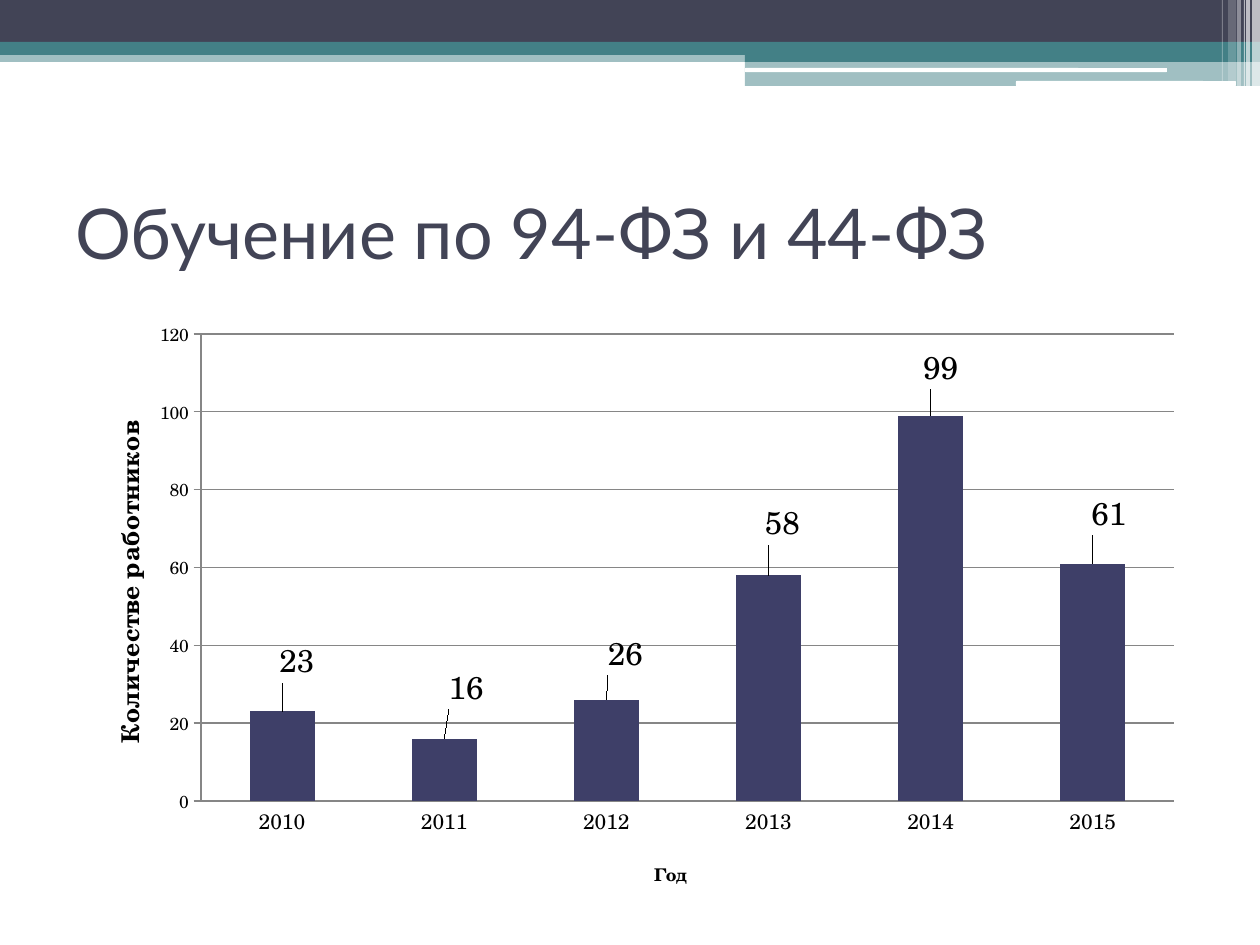
import lxml.etree
import pptx
import pptx.chart.data
import pptx.dml.color
import pptx.enum.chart
import pptx.enum.shapes
import pptx.enum.text
import pptx.oxml.ns
import pptx.util

EMU_PER_PX = 914400 / 126
INK = pptx.dml.color.RGBColor(0x42, 0x44, 0x56)
TEAL = pptx.dml.color.RGBColor(0x43, 0x80, 0x86)
WHITE = pptx.dml.color.RGBColor(0xFF, 0xFF, 0xFF)
BLACK = pptx.dml.color.RGBColor(0, 0, 0)
BAR = pptx.dml.color.RGBColor(0x3E, 0x3F, 0x68)
GRID = pptx.dml.color.RGBColor(0x86, 0x86, 0x86)

RECT = pptx.enum.shapes.MSO_SHAPE.RECTANGLE
ROUNDED = pptx.enum.shapes.MSO_SHAPE.ROUNDED_RECTANGLE
TICK = pptx.enum.chart.XL_TICK_MARK

# left, top, width, height, colour, opacity in percent, outline
BANDS = [
    (0, 50, 1260, 12, TEAL, 50, RECT),
    (0, 0, 1260, 42, INK, 100, RECT),
    (0, 42, 1260, 13, TEAL, 100, RECT),
    (745, 49, 515, 13, TEAL, 100, RECT),
    (745, 61, 515, 25, TEAL, 50, RECT),
    (745, 68, 422, 4, WHITE, 100, ROUNDED),
    (1016, 81, 220, 5, WHITE, 100, ROUNDED),
]
# left, width, height, opacity in percent
STRIPES = [
    (1252, 8, 86, 65),
    (1246, 4, 86, 65),
    (1244, 1, 86, 60),
    (1237, 4, 86, 40),
    (1228, 8, 81, 20),
    (1222, 1, 81, 30),
]
# year, trained workers, shift of the label in px
TRAINED = [
    ("2010", 23, (15, -23)),
    ("2011", 16, (22, -24)),
    ("2012", 26, (19, -19)),
    ("2013", 58, (14, -25)),
    ("2014", 99, (10, -21)),
    ("2015", 61, (16, -23)),
]


def px(length):
    return pptx.util.Emu(round(length * EMU_PER_PX))


def set_all(target, formats):
    for name, value in formats.items():
        setattr(target, name, value)


class Deck:
    title_font = "Lato"
    chart_font = "TeX Gyre Schola"

    def __init__(self, width, height):
        self.file = pptx.Presentation()
        set_all(self.file, {"slide_width": px(width), "slide_height": px(height)})
        self.slide = self.file.slides.add_slide(self.file.slide_layouts[6])

    def band(self, left, top, width, height, colour, opacity, outline=RECT):
        band = self.slide.shapes.add_shape(
            outline, px(left), px(top), px(width), px(height))
        band.shadow.inherit = False
        band.line.fill.background()
        band.fill.solid()
        band.fill.fore_color.rgb = colour
        if opacity < 100:
            tint = band.element.spPr.xpath("a:solidFill/a:srgbClr")[0]
            alpha = lxml.etree.SubElement(tint, pptx.oxml.ns.qn("a:alpha"))
            alpha.set("val", str(opacity * 1000))

    def heading(self, text, left, top, width, height):
        frame = self.slide.shapes.add_textbox(
            px(left), px(top), px(width), px(height)).text_frame
        set_all(frame, {
            "text": text,
            "word_wrap": True,
            "vertical_anchor": pptx.enum.text.MSO_ANCHOR.MIDDLE,
        })
        font = frame.paragraphs[0].runs[0].font
        set_all(font, {"name": self.title_font, "size": pptx.util.Pt(40)})
        font.color.rgb = INK

    def column_chart(self, records, left, top, width, height):
        data = pptx.chart.data.CategoryChartData()
        data.categories = [year for year, _, _ in records]
        data.add_series("Series 1", [count for _, count, _ in records])
        chart = self.slide.shapes.add_chart(
            pptx.enum.chart.XL_CHART_TYPE.COLUMN_CLUSTERED,
            px(left), px(top), px(width), px(height), data).chart
        set_all(chart, {"has_legend": False, "has_title": False})
        set_all(chart.font, {"name": self.chart_font, "size": pptx.util.Pt(10)})
        chart.font.color.rgb = BLACK
        set_all(chart.plots[0], {"gap_width": 150, "vary_by_categories": False})
        columns = chart.plots[0].series[0]
        columns.format.fill.solid()
        columns.format.fill.fore_color.rgb = BAR
        for index in range(len(records)):
            label = columns.points[index].data_label
            set_all(label.font, {"name": self.chart_font, "size": pptx.util.Pt(18)})
            label.font.color.rgb = BLACK
            label.position = pptx.enum.chart.XL_LABEL_POSITION.OUTSIDE_END
        for label, (_, _, (right, down)) in zip(chart.element.xpath(".//c:dLbl"), records):
            self.place(label, 1, {"x": right / width, "y": down / height})
        plot_area = chart.element.xpath("c:chart/c:plotArea")[0]
        self.place(plot_area, 0, {
            "layoutTarget": "inner", "xMode": "edge", "yMode": "edge",
            "x": 138 / width, "y": 24 / height, "w": 973 / width, "h": 467 / height,
        })
        return chart

    def axis(self, axis, title, title_size, title_spot, label_size, formats):
        """Style an axis; title_spot is a fraction of the chart size."""
        set_all(axis, formats)
        axis.tick_labels.font.size = pptx.util.Pt(label_size)
        axis.format.line.color.rgb = GRID
        if axis.has_major_gridlines:
            axis.major_gridlines.format.line.color.rgb = GRID
        axis.axis_title.text_frame.text = title
        font = axis.axis_title.text_frame.paragraphs[0].runs[0].font
        set_all(font, {
            "name": self.chart_font, "size": pptx.util.Pt(title_size), "bold": True})
        font.color.rgb = BLACK
        x, y = title_spot
        self.place(axis.axis_title.element, 1,
                   {"xMode": "edge", "yMode": "edge", "x": x, "y": y})

    def place(self, part, position, values):
        """Give a chart part a manual layout as its child at position."""
        qn = pptx.oxml.ns.qn
        for old in part.findall(qn("c:layout")):
            part.remove(old)
        layout = lxml.etree.Element(qn("c:layout"))
        manual = lxml.etree.SubElement(layout, qn("c:manualLayout"))
        for name, value in values.items():
            text = value if isinstance(value, str) else f"{value:.4f}"
            lxml.etree.SubElement(manual, qn("c:" + name)).set("val", text)
        part.insert(position, layout)


def main():
    deck = Deck(1260, 945)
    for band in BANDS:
        deck.band(*band)
    for left, width, height, opacity in STRIPES:
        deck.band(left, 0, width, height, WHITE, opacity)
    deck.heading("Обучение по 94-ФЗ и 44-ФЗ", 63, 158, 1134, 147)

    width, height = 1134, 596
    chart = deck.column_chart(TRAINED, 63, 310, width, height)
    deck.axis(chart.category_axis, "Год", 10, (588 / width, 547 / height), 12, {
        "major_tick_mark": TICK.NONE,
        "has_major_gridlines": False,
    })
    deck.axis(chart.value_axis, "Количестве работников", 14, (40 / width, 107 / height), 10, {
        "major_tick_mark": TICK.OUTSIDE,
        "has_major_gridlines": True,
        "minimum_scale": 0,
        "maximum_scale": 120,
        "major_unit": 20,
    })
    deck.file.save("out.pptx")


if __name__ == "__main__":
    main()
